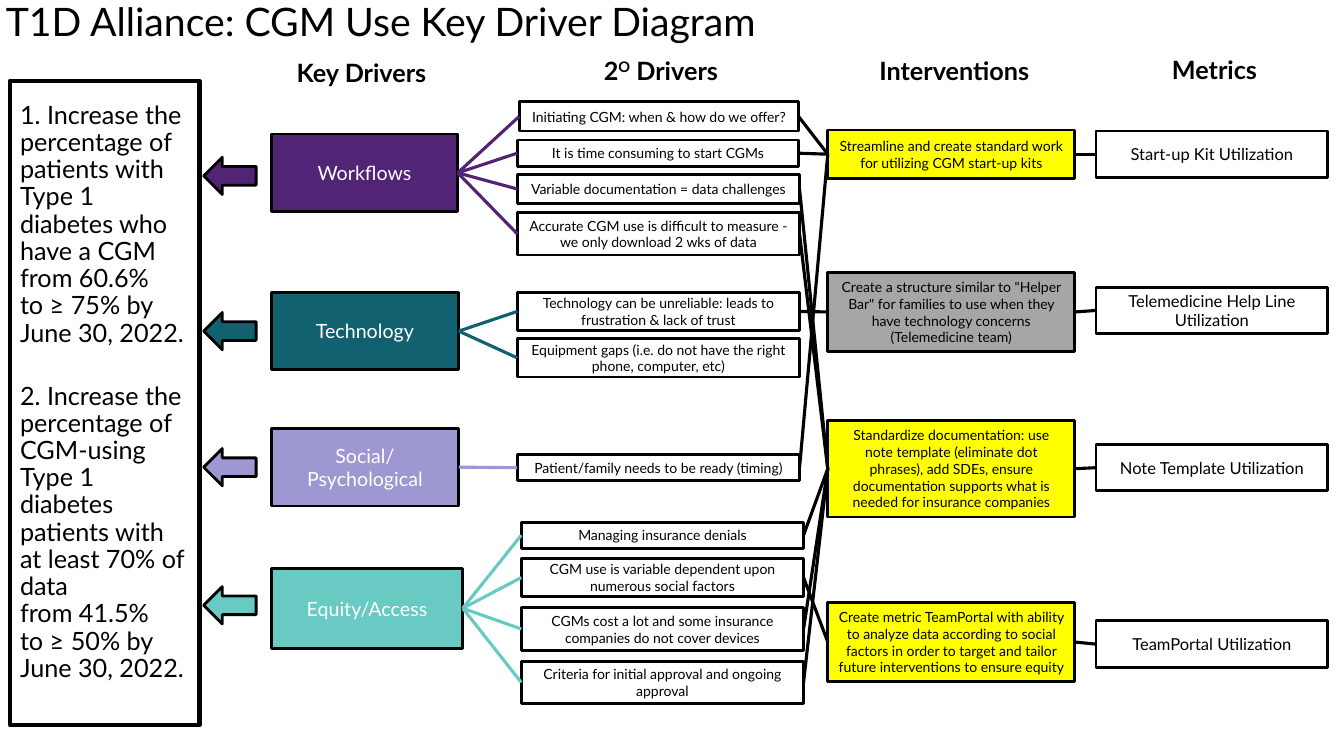
"""Build the CGM use key driver diagram slide."""
from dataclasses import dataclass

from lxml import etree
from pptx import Presentation, util as u
from pptx.dml.color import RGBColor
from pptx.enum import shapes as es, text as et
from pptx.oxml import ns

HUES = {
    "black": "000000", "white": "FFFFFF", "yellow": "FFFF00", "gray": "A6A6A6",
    "plum": "522476", "teal": "116171", "lilac": "9D97D2", "mint": "69C9C3",
}
BOLD = {"name": "Lato", "size": u.Pt(18), "bold": True}
PLAIN = {"name": "Lato", "size": u.Pt(18)}
TITLE = {"name": "Lato", "size": u.Pt(28)}
DRIVE = {"name": "Lato", "size": u.Pt(14)}
SMALL = {"name": "Lato", "size": u.Pt(10)}
METRIC = {"name": "Lato", "size": u.Pt(11.8)}
RECT, ARROW = es.MSO_SHAPE.RECTANGLE, es.MSO_SHAPE.LEFT_ARROW
LEFT, MID = et.PP_ALIGN.LEFT, et.PP_ALIGN.CENTER


@dataclass
class Box:
    key: str
    x: float
    y: float
    w: float
    h: float
    words: str
    fill: str = "white"


@dataclass
class Head:
    x: float
    y: float
    h: float
    words: tuple


AIM = Box("aim", 0.1, 0.8, 1.88, 6.39,
          "1. Increase the percentage of patients with Type 1\vdiabetes who have a CGM "
          "from 60.6%\vto ≥ 75% by June 30, 2022.\n"
          "2. Increase the percentage of CGM-using\vType 1\vdiabetes\vpatients with\v"
          "at least 70% of data\vfrom 41.5%\vto ≥ 50% by June 30, 2022.")
HEADS = [
    Head(2.56, 0.57, 0.34, ("Key Drivers",)),
    Head(5.53, 0.58, 0.27, ("2", "O", " Drivers")),
    Head(8.44, 0.58, 0.27, ("Interventions",)),
    Head(11.02, 0.57, 0.27, ("Metrics",)),
]
DRIVERS = [
    Box("work", 2.69, 1.33, 1.85, 0.77, "Workflows", "plum"),
    Box("tech", 2.69, 2.9, 1.86, 0.77, "Technology", "teal"),
    Box("social", 2.69, 4.25, 1.86, 0.77, "Social/\nPsychological", "lilac"),
    Box("access", 2.69, 5.64, 1.9, 0.79, "Equity/Access", "mint"),
]
ARROWS = {"plum": 1.56, "teal": 3.1, "lilac": 4.45, "mint": 5.82}
CAUSES = [
    Box("offer", 5.15, 1.01, 2.77, 0.29, "Initiating CGM: when & how do we offer?"),
    Box("time", 5.13, 1.39, 2.79, 0.26, "It is time consuming to start CGMs"),
    Box("data", 5.13, 1.73, 2.8, 0.29, "Variable documentation = data challenges"),
    Box("gauge", 5.13, 2.11, 2.8, 0.42,
        "Accurate CGM use is difficult to measure - we only download 2 wks of data"),
    Box("trust", 5.13, 2.9, 2.8, 0.38,
        "Technology can be unreliable: leads to frustration & lack of trust"),
    Box("gaps", 5.13, 3.36, 2.8, 0.38,
        "Equipment gaps (i.e. do not have the right phone, computer, etc)"),
    Box("ready", 5.13, 4.51, 2.8, 0.26, "Patient/family needs to be ready (timing)"),
    Box("deny", 5.17, 5.18, 2.8, 0.26, "Managing insurance denials"),
    Box("factor", 5.17, 5.54, 2.8, 0.38,
        "CGM use is variable dependent upon numerous social factors"),
    Box("cost", 5.17, 6.03, 2.8, 0.42,
        "CGMs cost a lot and some insurance companies do not cover devices"),
    Box("rules", 5.17, 6.56, 2.8, 0.42,
        "Criteria for initial approval and ongoing approval"),
]
ACTIONS = [
    Box("kits", 8.21, 1.29, 2.45, 0.48,
        "Streamline and create standard work for utilizing CGM start-up kits", "yellow"),
    Box("help", 8.21, 2.7, 2.45, 0.79,
        "Create a structure similar to \"Helper Bar\" for families to use when they "
        "have technology concerns (Telemedicine team)", "gray"),
    Box("notes", 8.21, 4.17, 2.45, 0.96,
        "Standardize documentation: use note template (eliminate dot phrases), add SDEs, "
        "ensure documentation supports what is needed for insurance companies", "yellow"),
    Box("share", 8.21, 5.98, 2.45, 0.78,
        "Create metric TeamPortal with ability to analyze data according to social "
        "factors in order to target and tailor future interventions to ensure equity",
        "yellow"),
]
METRICS = [
    Box("kit use", 10.87, 1.3, 2.3, 0.46, "Start-up Kit Utilization"),
    Box("help use", 10.87, 2.85, 2.3, 0.46, "Telemedicine Help Line Utilization"),
    Box("note use", 10.87, 4.41, 2.3, 0.46, "Note Template Utilization"),
    Box("share use", 10.87, 6.16, 2.3, 0.46, "TeamPortal Utilization"),
]
LINKS = {
    "work": ("plum", "offer", "time", "data", "gauge"),
    "tech": ("teal", "trust", "gaps"),
    "social": ("lilac", "ready"),
    "access": ("mint", "deny", "factor", "cost", "rules"),
    "offer": ("black", "kits"), "time": ("black", "kits"), "ready": ("black", "kits"),
    "trust": ("black", "help"),
    "data": ("black", "notes"), "gauge": ("black", "notes"), "deny": ("black", "notes"),
    "cost": ("black", "notes"), "rules": ("black", "notes"),
    "factor": ("black", "share"),
    "kits": ("black", "kit use"), "help": ("black", "help use"),
    "notes": ("black", "note use"), "share": ("black", "share use"),
}


def rgb(hue: str) -> RGBColor:
    return RGBColor.from_string(HUES[hue])


def style(font, form: dict, hue: str) -> None:
    for name, value in form.items():
        setattr(font, name, value)
    font.color.rgb = rgb(hue)


def place(slide, kind, x: float, y: float, w: float, h: float, fill: str, pen: float = 2):
    item = slide.shapes.add_shape(kind, *map(u.Inches, (x, y, w, h)))
    item.shadow.inherit = False
    item.fill.solid()
    item.fill.fore_color.rgb = rgb(fill)
    item.line.color.rgb = rgb("black")
    item.line.width = u.Pt(pen)
    return item


def draw_box(slide, box: Box, form: dict, hue: str = "black", align=MID, pen: float = 2):
    item = place(slide, RECT, box.x, box.y, box.w, box.h, box.fill, pen)
    frame = item.text_frame
    frame.word_wrap = True
    frame.vertical_anchor = et.MSO_ANCHOR.MIDDLE
    frame.text = box.words
    for para in frame.paragraphs:
        para.alignment = align
        for run in para.runs:
            style(run.font, form, hue)
    return item


def draw_aim(slide, box: Box) -> None:
    frame = draw_box(slide, box, PLAIN, align=LEFT, pen=3).text_frame
    frame.margin_bottom = u.Inches(0.25)
    for para in frame.paragraphs:
        para.line_spacing = 0.9
    frame.paragraphs[-1].space_before = u.Pt(25.5)


def draw_head(slide, head: Head) -> None:
    area = map(u.Inches, (head.x, head.y, 2.05, head.h))
    frame = slide.shapes.add_textbox(*area).text_frame
    for side in ("left", "top", "right", "bottom"):
        setattr(frame, f"margin_{side}", 0)
    frame.word_wrap = True
    frame.vertical_anchor = et.MSO_ANCHOR.MIDDLE
    para = frame.paragraphs[0]
    para.alignment = MID
    para.line_spacing = 0.9
    for word in head.words:
        run = para.add_run()
        run.text = word
        style(run.font, BOLD, "black")
        if word == "O":
            run._r.get_or_add_rPr().set("baseline", "30000")


def draw_link(slide, start, end, hue: str) -> None:
    link = slide.shapes.add_connector(es.MSO_CONNECTOR.STRAIGHT, 0, 0, 0, 0)
    link.begin_connect(start, 3)
    link.end_connect(end, 1)
    link.line.color.rgb = rgb(hue)
    link.line.width = u.Pt(2.25)
    etree.SubElement(link._element.spPr, ns.qn("a:effectLst"))


def main() -> None:
    deck = Presentation()
    deck.slide_width, deck.slide_height = u.Inches(13.33), u.Inches(7.5)
    slide = deck.slides.add_slide(deck.slide_layouts[6])
    title = slide.shapes.add_textbox(*map(u.Inches, (-0.04, -0.08, 8.5, 0.57)))
    title.text_frame.word_wrap = True
    title.text_frame.text = "T1D Alliance: CGM Use Key Driver Diagram"
    style(title.text_frame.paragraphs[0].runs[0].font, TITLE, "black")
    draw_aim(slide, AIM)
    for head in HEADS:
        draw_head(slide, head)
    for hue, y in ARROWS.items():
        place(slide, ARROW, 2.02, y, 0.52, 0.37, hue)
    made = {}
    groups = ((DRIVERS, DRIVE, "white"), (CAUSES, SMALL, "black"),
              (ACTIONS, SMALL, "black"), (METRICS, METRIC, "black"))
    for boxes, form, hue in groups:
        for box in boxes:
            made[box.key] = draw_box(slide, box, form, hue)
    for start, (hue, *ends) in LINKS.items():
        for end in ends:
            draw_link(slide, made[start], made[end], hue)
    deck.save("out.pptx")


if __name__ == "__main__":
    main()
